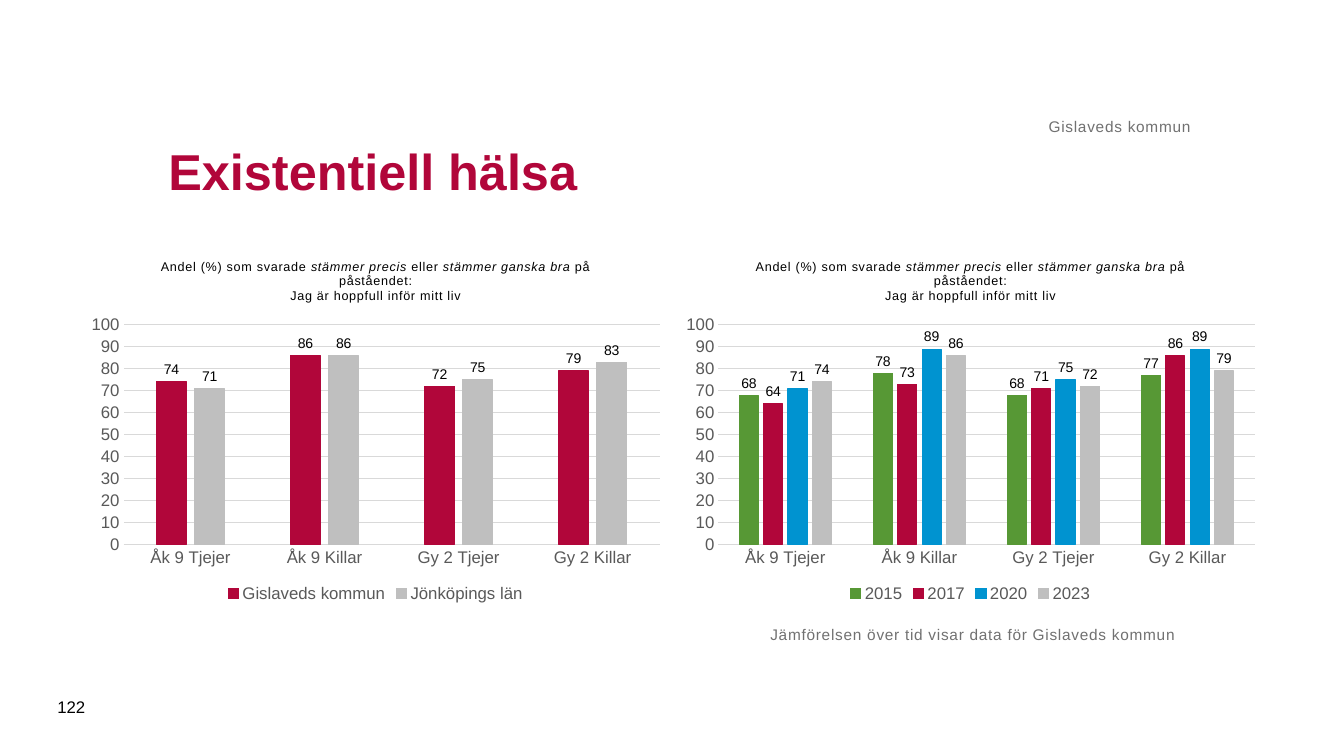
"""Builds the slide on existential health with two column charts."""
import pptx
import pptx.chart.data
import pptx.dml.color
import pptx.enum.chart
import pptx.enum.text
import pptx.util

Inches = pptx.util.Inches
Pt = pptx.util.Pt
RGBColor = pptx.dml.color.RGBColor
Align = pptx.enum.text.PP_ALIGN
Anchor = pptx.enum.text.MSO_ANCHOR

CRIMSON = RGBColor(0xB1, 0x06, 0x3A)
GREEN = RGBColor(0x57, 0x98, 0x35)
BLUE = RGBColor(0x00, 0x93, 0xD0)
SILVER = RGBColor(0xBF, 0xBF, 0xBF)
GRID = RGBColor(0xD9, 0xD9, 0xD9)
AXIS_TEXT = RGBColor(0x59, 0x59, 0x59)
NOTE_TEXT = RGBColor(0x71, 0x71, 0x71)
BLACK = RGBColor(0, 0, 0)

NUMBER_FORMAT = "#,##0;#,##0"
GROUPS = ["Åk 9 Tjejer", "Åk 9 Killar", "Gy 2 Tjejer", "Gy 2 Killar"]
QUESTION = [
    [("Andel (%) som svarade ", False), ("stämmer precis", True),
     (" eller ", False), ("stämmer ganska bra", True),
     (" på påståendet:", False)],
    [("Jag är hoppfull inför mitt liv", False)],
]
COMPARISON = [
    ("Gislaveds kommun", [74, 86, 72, 79], CRIMSON),
    ("Jönköpings län", [71, 86, 75, 83], SILVER),
]
TREND = [
    ("2015", [68, 78, 68, 77], GREEN),
    ("2017", [64, 73, 71, 86], CRIMSON),
    ("2020", [71, 89, 75, 89], BLUE),
    ("2023", [74, 86, 72, 79], SILVER),
]


class SlideBuilder:
    """Holds the text style and the current slide."""

    typeface = "Arial"
    spacing = "50"

    def __init__(self, presentation):
        self.slide = presentation.slides.add_slide(presentation.slide_layouts[5])

    def style(self, font, size, color, bold=False):
        font.name = self.typeface
        font.size = Pt(size)
        font.bold = bold
        font.color.rgb = color

    def place(self, shape, left, top, width, height):
        shape.left, shape.top = Inches(left), Inches(top)
        shape.width, shape.height = Inches(width), Inches(height)

    def title(self, text, *box):
        shape = self.slide.shapes.title
        self.place(shape, *box)
        frame = shape.text_frame
        frame.text = text
        frame.vertical_anchor = Anchor.MIDDLE
        paragraph = frame.paragraphs[0]
        paragraph.alignment = Align.LEFT
        self.style(paragraph.font, 36, CRIMSON, bold=True)

    def text(self, text, *box, size=11, color=NOTE_TEXT, align=Align.LEFT,
             anchor=Anchor.TOP, inset=0, spaced=True):
        shape = self.slide.shapes.add_textbox(*map(Inches, box))
        frame = shape.text_frame
        frame.word_wrap = True
        frame.vertical_anchor = anchor
        frame.margin_left = frame.margin_right = Inches(inset)
        frame.margin_top = frame.margin_bottom = Inches(inset / 2)
        paragraph = frame.paragraphs[0]
        paragraph.alignment = align
        run = paragraph.add_run()
        run.text = text
        self.style(paragraph.font, size, color)
        if spaced:
            run.font._element.set("spc", self.spacing)

    def chart_title(self, chart):
        chart.has_title = True
        chart.chart_title.include_in_layout = False
        frame = chart.chart_title.text_frame
        for index, parts in enumerate(QUESTION):
            paragraph = frame.add_paragraph() if index else frame.paragraphs[0]
            paragraph.alignment = Align.CENTER
            for text, italic in parts:
                run = paragraph.add_run()
                run.text = text
                self.style(run.font, 9, BLACK)
                run.font.italic = italic
                run.font._element.set("spc", self.spacing)

    def axis(self, axis):
        axis.major_tick_mark = pptx.enum.chart.XL_TICK_MARK.NONE
        axis.minor_tick_mark = pptx.enum.chart.XL_TICK_MARK.NONE
        self.style(axis.tick_labels.font, 12, AXIS_TEXT)

    def line(self, line, color):
        line.color.rgb = color
        line.width = Pt(0.75)

    def chart(self, rows, *box):
        data = pptx.chart.data.CategoryChartData(number_format=NUMBER_FORMAT)
        data.categories = GROUPS
        for name, values, _ in rows:
            data.add_series(name, values)
        chart = self.slide.shapes.add_chart(
            pptx.enum.chart.XL_CHART_TYPE.COLUMN_CLUSTERED,
            *map(Inches, box), data).chart
        self.style(chart.font, 10, BLACK)
        self.chart_title(chart)

        self.axis(chart.category_axis)
        self.line(chart.category_axis.format.line, GRID)
        value_axis = chart.value_axis
        self.axis(value_axis)
        value_axis.format.line.fill.background()
        value_axis.minimum_scale, value_axis.maximum_scale = 0, 100
        value_axis.major_unit = 10
        value_axis.tick_labels.number_format = NUMBER_FORMAT
        value_axis.tick_labels.number_format_is_linked = False
        self.line(value_axis.major_gridlines.format.line, GRID)

        chart.has_legend = True
        chart.legend.position = pptx.enum.chart.XL_LEGEND_POSITION.BOTTOM
        chart.legend.include_in_layout = False
        self.style(chart.legend.font, 12, AXIS_TEXT)

        plot = chart.plots[0]
        plot.vary_by_categories = False
        plot.gap_width, plot.overlap = 219, -27
        for series, (_, _, color) in zip(plot.series, rows):
            series.format.fill.solid()
            series.format.fill.fore_color.rgb = color
            self.line(series.format.line, color)
            labels = series.data_labels
            labels.show_value = True
            labels.position = pptx.enum.chart.XL_LABEL_POSITION.OUTSIDE_END
            labels.number_format = NUMBER_FORMAT
            labels.number_format_is_linked = False
            self.style(labels.font, 10, BLACK)


def main():
    presentation = pptx.Presentation()
    presentation.slide_width = Inches(13.33)
    presentation.slide_height = Inches(7.5)
    builder = SlideBuilder(presentation)
    for left, rows in ((0.79, COMPARISON), (6.69, TREND)):
        builder.chart(rows, left, 2.4, 5.87, 3.62)
    builder.title("Existentiell hälsa", 1.57, 0.98, 10.24, 1.42)
    builder.text("Jämförelsen över tid visar data för Gislaveds kommun",
                 7.64, 6.2, 5.31, 0.94)
    builder.text("Gislaveds kommun", 1.57, 0.62, 10.24, 0.73,
                 align=Align.RIGHT, anchor=Anchor.BOTTOM)
    builder.text("122", 0.47, 6.81, 0.57, 0.4, size=12, color=BLACK,
                 anchor=Anchor.MIDDLE, inset=0.1, spaced=False)
    presentation.save("out.pptx")


if __name__ == "__main__":
    main()
